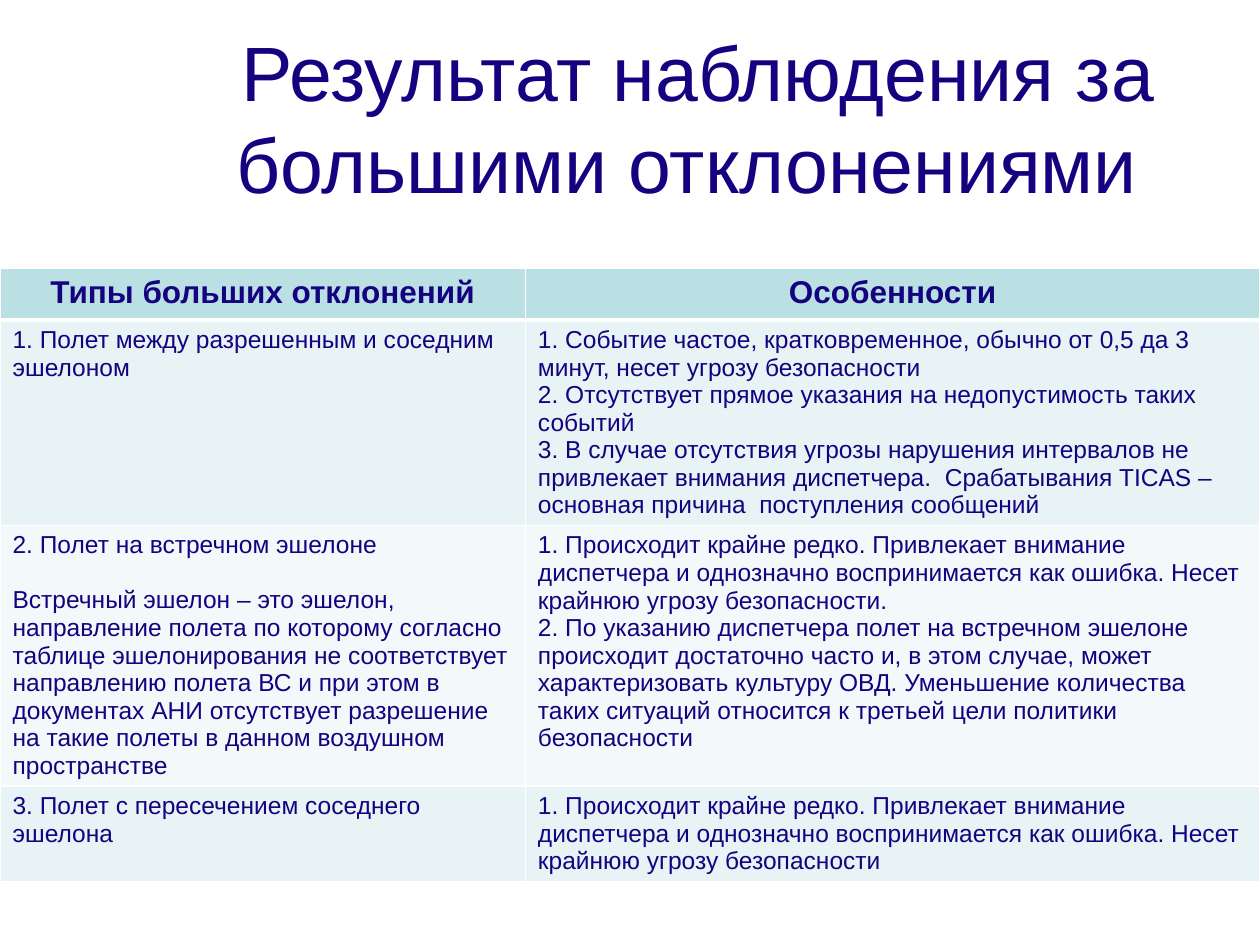
from lxml import etree
from pptx import Presentation
from pptx import util as u
from pptx.dml import color
from pptx.enum import text
from pptx.oxml import ns

FONT = "Arial"
NAVY, WHITE = "140280", "FFFFFF"
HEADER_FILL, BAND_FILLS = "BBE0E3", ("E7F3F4", "F3F9FA")
TITLE = "Результат наблюдения за большими отклонениями "
HEADERS = ("Типы больших отклонений", "Особенности")
RARE = ("1. Происходит крайне редко. Привлекает внимание диспетчера и однозначно "
        "воспринимается как ошибка. Несет крайнюю угрозу безопасности")
DEVIATIONS = (
    (
        ("1. Полет между разрешенным и соседним эшелоном",),
        ("1. Событие частое, кратковременное, обычно от 0,5 да 3 минут, несет угрозу безопасности",
         "2. Отсутствует прямое указания на недопустимость таких событий",
         "3. В случае отсутствия угрозы нарушения интервалов не привлекает внимания "
         "диспетчера.  Срабатывания TICAS – основная причина  поступления сообщений"),
    ),
    (
        ("2. Полет на встречном эшелоне",
         "Встречный эшелон – это эшелон, направление полета по которому согласно таблице "
         "эшелонирования не соответствует направлению полета ВС и при этом в документах АНИ "
         "отсутствует разрешение на такие полеты в данном воздушном пространстве"),
        (RARE + ".",
         "2. По указанию диспетчера полет на встречном эшелоне происходит достаточно часто и, "
         "в этом случае, может характеризовать культуру ОВД. Уменьшение количества таких "
         "ситуаций относится к третьей цели политики безопасности"),
    ),
    (("3. Полет с пересечением соседнего эшелона",), (RARE,)),
)
COLUMN_SHARES = (0.417, 0.583)
ROW_HEIGHTS = (0.41, 1.63, 2.07, 0.76)


def rgb(value):
    """Turn a hex string into a colour."""
    return color.RGBColor.from_string(value)


def write(frame, lines, size, bold=False, align=text.PP_ALIGN.LEFT, gap=0):
    """Fill a text frame with one paragraph per line, gap points apart."""
    frame.word_wrap = True
    for index, line in enumerate(lines):
        para = frame.paragraphs[0] if index == 0 else frame.add_paragraph()
        para.alignment = align
        para.space_before = u.Pt(gap if index else 0)
        span = para.add_run()
        span.text = line
        span.font.name = FONT
        span.font.size = u.Pt(size)
        span.font.bold = bold
        span.font.color.rgb = rgb(value=NAVY)


def style_cell(cell, fill, top=1, bottom=1):
    """Give a cell white borders of the given point widths and a solid fill."""
    props = cell._tc.get_or_add_tcPr()
    for side, width in (("L", 1), ("R", 1), ("T", top), ("B", bottom)):
        line = etree.SubElement(props, ns.qn(f"a:ln{side}"), w=str(u.Pt(width)))
        solid = etree.SubElement(line, ns.qn("a:solidFill"))
        etree.SubElement(solid, ns.qn("a:srgbClr"), val=WHITE)
    cell.fill.solid()
    cell.fill.fore_color.rgb = rgb(fill)


def place_title(page, left, top, width, height):
    """Move and format the title placeholder."""
    title = page.shapes.title
    title.left, title.top = u.Inches(left), u.Inches(top)
    title.width, title.height = u.Inches(width), u.Inches(height)
    title.text_frame.auto_size = text.MSO_AUTO_SIZE.NONE
    title.text_frame.vertical_anchor = text.MSO_ANCHOR.MIDDLE
    write(title.text_frame, [TITLE], 44, align=text.PP_ALIGN.CENTER)


def place_table(page, left, top, width):
    """Place the table of deviation types and their features."""
    frame = page.shapes.add_table(
        len(ROW_HEIGHTS), len(COLUMN_SHARES), u.Inches(left), u.Inches(top),
        u.Inches(width), u.Inches(sum(ROW_HEIGHTS)))
    table = frame.table
    for column, share in zip(table.columns, COLUMN_SHARES):
        column.width = u.Inches(width * share)
    for row, height in zip(table.rows, ROW_HEIGHTS):
        row.height = u.Inches(height)
    for column, header in enumerate(HEADERS):
        cell = table.cell(0, column)
        style_cell(cell, HEADER_FILL, bottom=3)
        write(cell.text_frame, [header], 18, bold=True, align=text.PP_ALIGN.CENTER)
    for row, entries in enumerate(DEVIATIONS, start=1):
        for column, lines in enumerate(entries):
            cell = table.cell(row, column)
            style_cell(cell, BAND_FILLS[(row - 1) % 2], top=3 if row == 1 else 1)
            write(cell.text_frame, lines, 14, gap=15.7 if column == 0 else 0)


def main():
    """Build and save the deck."""
    deck = Presentation()
    deck.slide_width, deck.slide_height = u.Inches(10), u.Inches(7.5)
    page = deck.slides.add_slide(deck.slide_layouts.get_by_name("Title Only"))
    page.background.fill.solid()
    page.background.fill.fore_color.rgb = rgb(WHITE)
    place_title(page, 1.58, 0.3, 7.92, 1.25)
    place_table(page, 0, 2.13, 10)
    deck.save("out.pptx")


if __name__ == "__main__":
    main()
